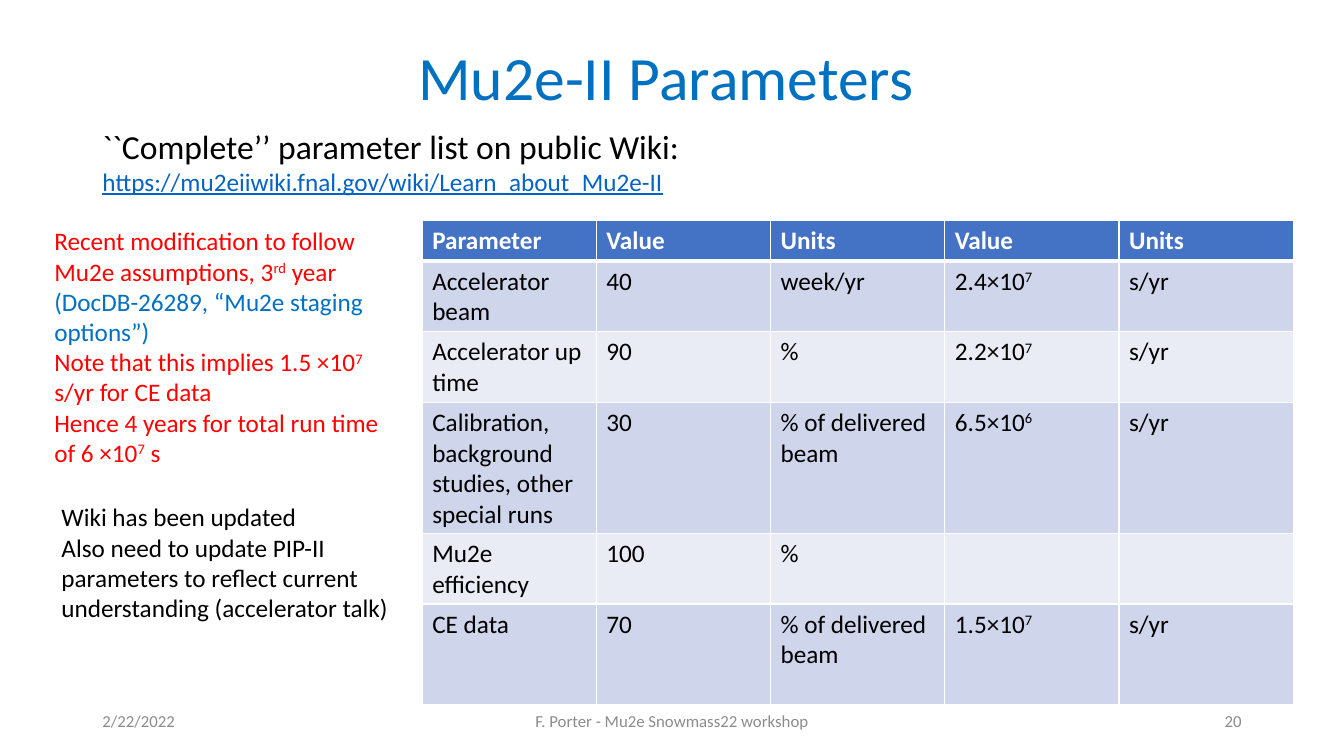
from pptx import Presentation
from pptx.dml.color import RGBColor
from pptx.enum.text import MSO_ANCHOR as Anchor, PP_ALIGN as Align
from pptx.oxml import parse_xml
from pptx.oxml.ns import nsdecls
from pptx.util import Cm, Pt

BLUE, RED, BLACK, WHITE, GRAY = "0070C0", "FF0000", "000000", "FFFFFF", "8C8C8C"
LINK, HEAD, BANDS = "0563C1", "4472C4", ("E9EBF5", "CFD5EA")

ROWS = [
    ["Parameter", "Value", "Units", "Value", "Units"],
    ["Accelerator beam", "40", "week/yr", "2.4×10^7", "s/yr"],
    ["Accelerator up time", "90", "%", "2.2×10^7", "s/yr"],
    ["Calibration, background studies, other special runs", "30",
     "% of delivered beam", "6.5×10^6", "s/yr"],
    ["Mu2e efficiency", "100", "%", "", ""],
    ["CE data", "70", "% of delivered beam", "1.5×10^7", "s/yr"],
]
HEIGHTS = [1, 1.78, 1.78, 3.3, 1.78, 2.53]


def color(code):
    return RGBColor.from_string(code)


def write(para, text, size=18, ink=BLACK, bold=False, line=False,
          align=Align.LEFT, space=None):
    """Fill a paragraph; parts between ^ marks are raised."""
    para.alignment = align
    if space:
        para.line_spacing = space
    for i, part in enumerate(text.split("^")):
        run = para.add_run()
        run.text = part
        font = run.font
        font.name, font.size, font.bold = "Calibri", Pt(size), bold
        font.underline = line
        font.color.rgb = color(ink)
        if i % 2:
            run._r.get_or_add_rPr().set("baseline", "30000")


def add_text(slide, box, items, anchor=Anchor.TOP):
    """Add a text box; items are pairs of text and format."""
    frame = slide.shapes.add_textbox(*map(Cm, box)).text_frame
    frame.word_wrap = True
    frame.vertical_anchor = anchor
    for i, (text, style) in enumerate(items):
        para = frame.add_paragraph() if i else frame.paragraphs[0]
        write(para, text, **style)


def add_edges(cell, row):
    """Draw white cell borders, thick below the header."""
    props = cell._tc.get_or_add_tcPr()
    for side in "LRTB":
        thick = (row, side) in ((0, "B"), (1, "T"))
        props.append(parse_xml(
            f'<a:ln{side} {nsdecls("a")} w="{Pt(3 if thick else 1)}"><a:solidFill>'
            f'<a:srgbClr val="{WHITE}"/></a:solidFill></a:ln{side}>'))


def add_grid(slide, left, top, width):
    count = len(ROWS[0])
    grid = slide.shapes.add_table(
        len(ROWS), count, Cm(left), Cm(top), Cm(width), Cm(sum(HEIGHTS))).table
    for col in grid.columns:
        col.width = Cm(width / count)
    for r, texts in enumerate(ROWS):
        grid.rows[r].height = Cm(HEIGHTS[r])
        for c, text in enumerate(texts):
            cell = grid.cell(r, c)
            add_edges(cell, r)
            cell.fill.solid()
            cell.fill.fore_color.rgb = color(BANDS[r % 2] if r else HEAD)
            if text:
                write(cell.text_frame.paragraphs[0], text,
                      ink=BLACK if r else WHITE, bold=not r)


def add_footer(slide):
    for left, width, text, align in (
            (2.33, 7.62, "2/22/2022", Align.LEFT),
            (11.22, 11.43, "F. Porter - Mu2e Snowmass22 workshop", Align.CENTER),
            (23.92, 7.62, "20", Align.RIGHT)):
        style = dict(size=12, ink=GRAY, align=align)
        add_text(slide, (left, 17.65, width, 1.01), [(text, style)], Anchor.MIDDLE)


def main():
    deck = Presentation()
    deck.slide_width, deck.slide_height = Cm(33.87), Cm(19.05)
    slide = deck.slides.add_slide(deck.slide_layouts[6])
    red, blue = dict(ink=RED), dict(ink=BLUE)
    add_text(slide, (10.29, 0.86, 15.44, 2.36),
             [("Mu2e-II Parameters", dict(size=44, ink=BLUE, space=0.9))],
             Anchor.MIDDLE)
    add_footer(slide)
    add_text(slide, (2.33, 3.05, 27.91, 2.82), [
        ("``Complete’’ parameter list on public Wiki:", dict(size=24)),
        ("https://mu2eiiwiki.fnal.gov/wiki/Learn_about_Mu2e-II",
         dict(ink=LINK, line=True))])
    add_grid(slide, 10.64, 5.56, 21.95)
    add_text(slide, (1.12, 5.56, 9.32, 6.4), [
        ("Recent modification to follow Mu2e assumptions, 3^rd^ year", red),
        ("(DocDB-26289, “Mu2e staging options”)", blue),
        ("Note that this implies 1.5 ×10^7 ^s/yr for CE data", red),
        ("Hence 4 years for total run time of 6 ×10^7^ s", red)])
    add_text(slide, (1.3, 12.52, 8.99, 3.33), [
        ("Wiki has been updated", {}),
        ("Also need to update PIP-II parameters to reflect current "
         "understanding (accelerator talk)", {})])
    deck.save("out.pptx")


if __name__ == "__main__":
    main()
